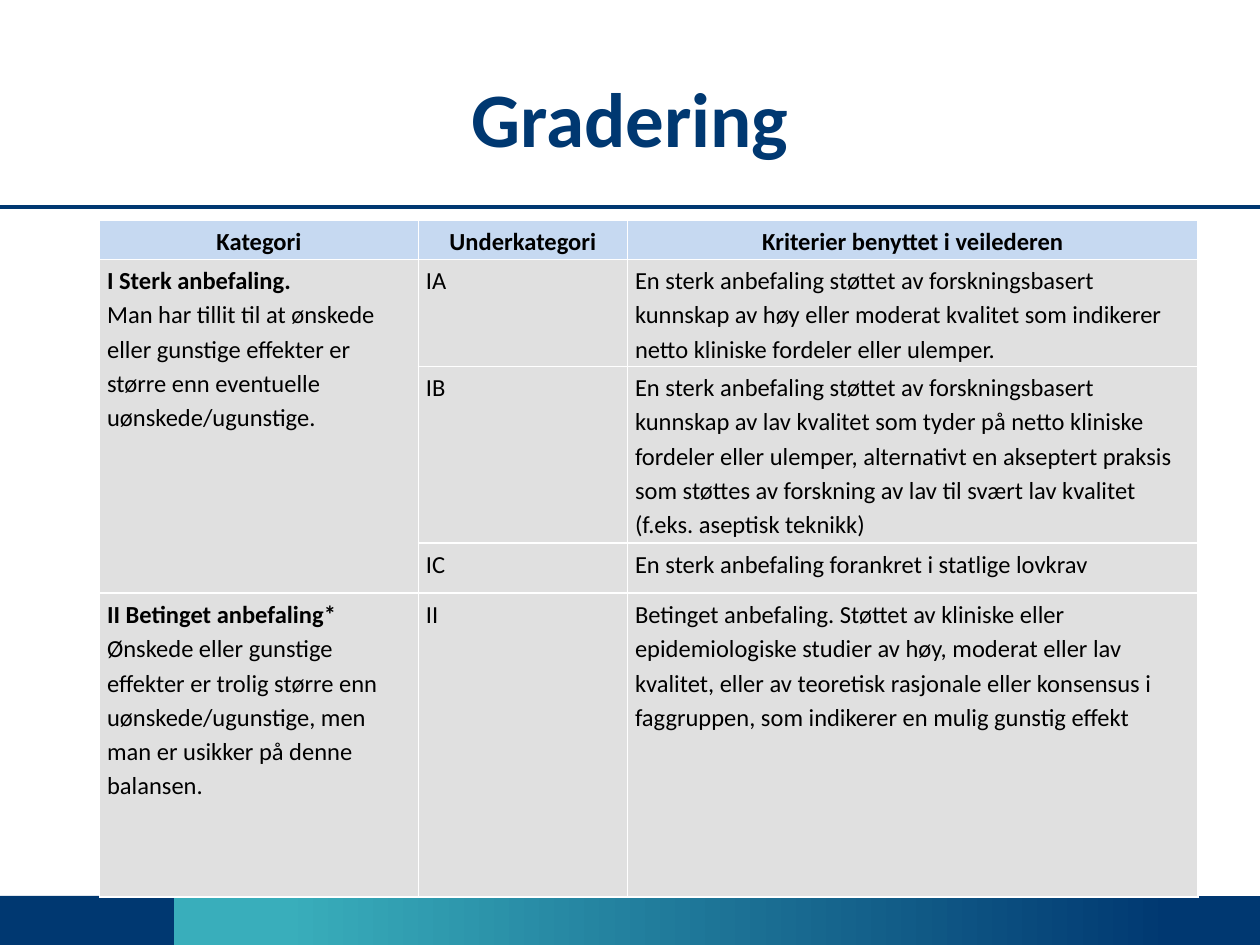
from dataclasses import dataclass

from lxml.etree import SubElement
from pptx import Presentation
from pptx.dml.color import RGBColor
from pptx.enum.shapes import MSO_CONNECTOR, MSO_SHAPE
from pptx.enum.text import MSO_ANCHOR, PP_ALIGN
from pptx.oxml.ns import qn
from pptx.shapes.autoshape import Shape
from pptx.slide import Slide
from pptx.table import _Cell as Cell
from pptx.util import Inches, Pt

NAVY = RGBColor(0x00, 0x38, 0x71)
TEAL = RGBColor(0x39, 0xAE, 0xBB)
BLACK = RGBColor(0x00, 0x00, 0x00)
WHITE = RGBColor(0xFF, 0xFF, 0xFF)
HEADER_BLUE = RGBColor(0xC6, 0xD9, 0xF1)
BODY_GREY = RGBColor(0xE0, 0xE0, 0xE0)
FONT = "Calibri"

SLIDE_WIDTH, SLIDE_HEIGHT = 10, 7.5
FOOTER_TOP, FOOTER_SPLIT = 7.11, 1.38
RULE_TOP = 1.64
COLUMN_WIDTHS = (2.53, 1.66, 4.53)
ROW_HEIGHTS = (0.3, 0.85, 1.4, 0.4, 2.41)


@dataclass(frozen=True)
class Span:
    text: str
    bold: bool = False


@dataclass(frozen=True)
class Entry:
    """Cell content: paragraphs, each a tuple of spans, at a row and column."""
    row: int
    column: int
    paragraphs: tuple[tuple[Span, ...], ...]


HEADINGS = ("Kategori", "Underkategori", "Kriterier benyttet i veilederen")
CATEGORIES = (
    Entry(1, 0, (
        (Span("I Sterk anbefaling.", True),),
        (Span("Man har tillit til at ønskede eller gunstige effekter er større "
              "enn eventuelle uønskede/ugunstige."),),
    )),
    Entry(4, 0, ((
        Span("II Betinget anbefaling*", True),
        Span(" Ønskede eller gunstige effekter er trolig større enn "
             "uønskede/ugunstige, men man er usikker på denne balansen."),
    ),)),
)
CRITERIA = (
    ("IA", "En sterk anbefaling støttet av forskningsbasert kunnskap av høy "
           "eller moderat kvalitet som indikerer netto kliniske fordeler eller "
           "ulemper."),
    ("IB", "En sterk anbefaling støttet av forskningsbasert kunnskap av lav "
           "kvalitet som tyder på netto kliniske fordeler eller ulemper, "
           "alternativt en akseptert praksis som støttes av forskning av lav "
           "til svært lav kvalitet (f.eks. aseptisk teknikk)"),
    ("IC", "En sterk anbefaling forankret i statlige lovkrav"),
    ("II", "Betinget anbefaling. Støttet av kliniske eller epidemiologiske "
           "studier av høy, moderat eller lav kvalitet, eller av teoretisk "
           "rasjonale eller konsensus i faggruppen, som indikerer en mulig "
           "gunstig effekt"),
)


def plain_entry(row: int, column: int, text: str, bold: bool = False) -> Entry:
    return Entry(row, column, ((Span(text, bold),),))


def add_footer_band(page: Slide, left: float, right: float) -> Shape:
    band = page.shapes.add_shape(
        MSO_SHAPE.RECTANGLE, Inches(left), Inches(FOOTER_TOP),
        Inches(right - left), Inches(SLIDE_HEIGHT - FOOTER_TOP))
    band.shadow.inherit = False
    band.line.fill.background()
    return band


def add_footer(page: Slide) -> None:
    fade = add_footer_band(page, FOOTER_SPLIT, SLIDE_WIDTH).fill
    fade.gradient()
    fade.gradient_angle = 0
    for stop, position, color in zip(fade.gradient_stops, (0.1, 0.92), (TEAL, NAVY)):
        stop.position = position
        stop.color.rgb = color
    solid = add_footer_band(page, 0, FOOTER_SPLIT).fill
    solid.solid()
    solid.fore_color.rgb = NAVY


def add_rule(page: Slide) -> None:
    rule = page.shapes.add_connector(
        MSO_CONNECTOR.STRAIGHT, 0, Inches(RULE_TOP),
        Inches(SLIDE_WIDTH), Inches(RULE_TOP))
    rule.line.color.rgb = NAVY
    rule.line.width = Pt(2.25)
    SubElement(rule._element.spPr, qn("a:effectLst"))


def add_title(page: Slide, text: str) -> None:
    box = page.shapes.add_textbox(Inches(0.5), Inches(0.3), Inches(9), Inches(1.25))
    frame = box.text_frame
    frame.word_wrap = True
    frame.vertical_anchor = MSO_ANCHOR.MIDDLE
    frame.text = text
    para = frame.paragraphs[0]
    para.alignment = PP_ALIGN.CENTER
    font = para.runs[0].font
    font.name, font.size, font.bold = FONT, Pt(44), True
    font.color.rgb = NAVY


def style_cell(cell: Cell, color: RGBColor) -> None:
    """Set margins, white borders and fill; borders must precede the fill."""
    cell.margin_left = cell.margin_right = Inches(0.06)
    cell.margin_top = cell.margin_bottom = Inches(0.02)
    properties = cell._tc.get_or_add_tcPr()
    for side in ("a:lnL", "a:lnR", "a:lnT", "a:lnB"):
        border = SubElement(properties, qn(side), w=str(Pt(1)))
        paint = SubElement(border, qn("a:solidFill"))
        SubElement(paint, qn("a:srgbClr"), val=str(WHITE))
    cell.fill.solid()
    cell.fill.fore_color.rgb = color


def write_cell(cell: Cell, entry: Entry) -> None:
    frame = cell.text_frame
    for index, spans in enumerate(entry.paragraphs):
        para = frame.add_paragraph() if index else frame.paragraphs[0]
        para.line_spacing = 1.15
        para.alignment = PP_ALIGN.LEFT if entry.row else PP_ALIGN.CENTER
        for span in spans:
            run = para.add_run()
            run.text = span.text
            font = run.font
            font.name, font.size, font.bold = FONT, Pt(14), span.bold
            font.color.rgb = BLACK


def add_grading_table(page: Slide) -> None:
    table = page.shapes.add_table(
        len(ROW_HEIGHTS), len(COLUMN_WIDTHS), Inches(0.79), Inches(1.75),
        Inches(sum(COLUMN_WIDTHS)), Inches(sum(ROW_HEIGHTS))).table
    for column, width in zip(table.columns, COLUMN_WIDTHS):
        column.width = Inches(width)
    for index, (row, height) in enumerate(zip(table.rows, ROW_HEIGHTS)):
        row.height = Inches(height)
        for cell in row.cells:
            style_cell(cell, BODY_GREY if index else HEADER_BLUE)
    table.cell(1, 0).merge(table.cell(3, 0))

    entries = [plain_entry(0, column, text, True)
               for column, text in enumerate(HEADINGS)]
    entries += CATEGORIES
    entries += [plain_entry(row, column, text)
                for row, pair in enumerate(CRITERIA, start=1)
                for column, text in enumerate(pair, start=1)]
    for entry in entries:
        write_cell(table.cell(entry.row, entry.column), entry)


def main() -> None:
    deck = Presentation()
    deck.slide_width, deck.slide_height = Inches(SLIDE_WIDTH), Inches(SLIDE_HEIGHT)
    page = deck.slides.add_slide(deck.slide_layouts[6])
    add_footer(page)
    add_rule(page)
    add_title(page, "Gradering")
    add_grading_table(page)
    deck.save("out.pptx")


if __name__ == "__main__":
    main()
